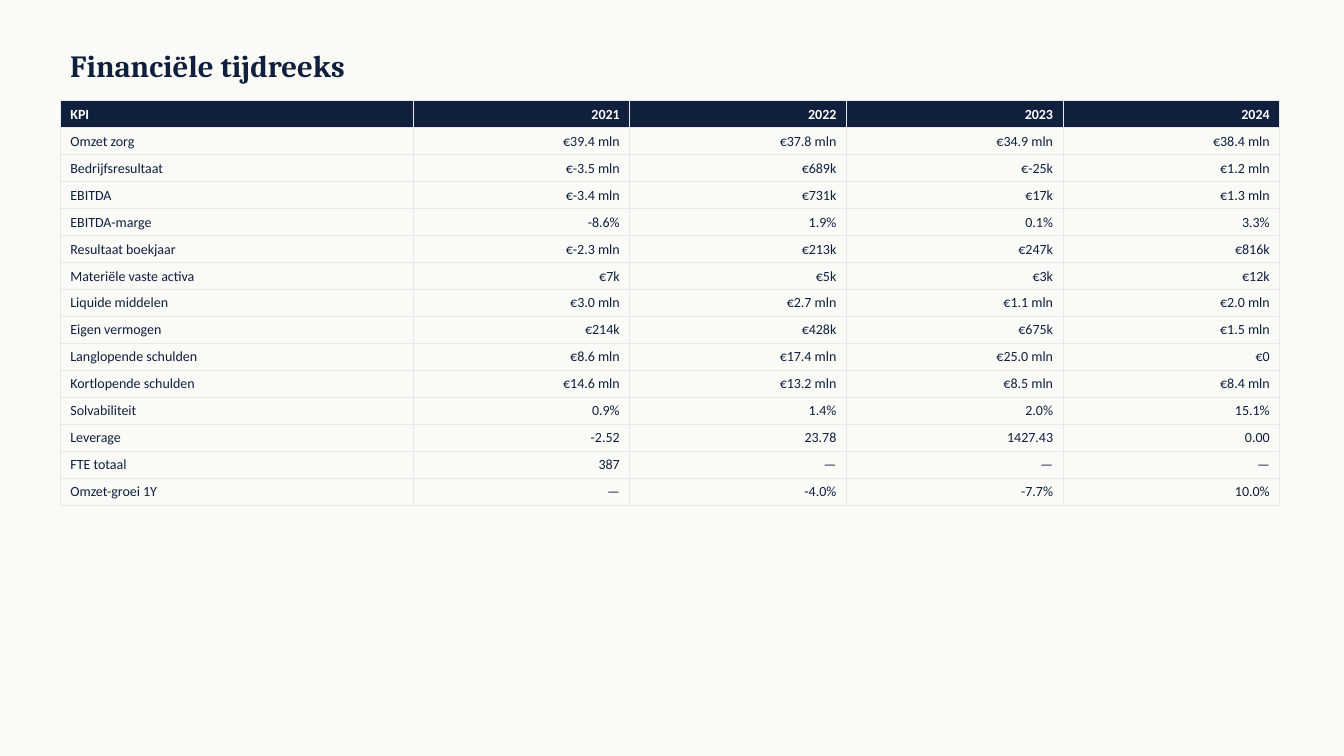
from lxml import etree
from pptx import Presentation
from pptx.dml.color import RGBColor
from pptx.enum.text import MSO_ANCHOR, PP_ALIGN
from pptx.oxml.ns import qn
from pptx.util import Cm, Pt

LEFT, RIGHT = PP_ALIGN.LEFT, PP_ALIGN.RIGHT
MIDDLE = MSO_ANCHOR.MIDDLE
NAVY, WHITE, PAPER, GRID = "0F1F3D", "FFFFFF", "FAFAF7", "E5E7EB"
ROW_HEIGHT = 0.68
COLUMN_WIDTHS = [8.89] + [5.46] * 4

KPI_ROWS = [
    ("KPI", "2021", "2022", "2023", "2024"),
    ("Omzet zorg", "€39.4 mln", "€37.8 mln", "€34.9 mln", "€38.4 mln"),
    ("Bedrijfsresultaat", "€-3.5 mln", "€689k", "€-25k", "€1.2 mln"),
    ("EBITDA", "€-3.4 mln", "€731k", "€17k", "€1.3 mln"),
    ("EBITDA-marge", "-8.6%", "1.9%", "0.1%", "3.3%"),
    ("Resultaat boekjaar", "€-2.3 mln", "€213k", "€247k", "€816k"),
    ("Materiële vaste activa", "€7k", "€5k", "€3k", "€12k"),
    ("Liquide middelen", "€3.0 mln", "€2.7 mln", "€1.1 mln", "€2.0 mln"),
    ("Eigen vermogen", "€214k", "€428k", "€675k", "€1.5 mln"),
    ("Langlopende schulden", "€8.6 mln", "€17.4 mln", "€25.0 mln", "€0"),
    ("Kortlopende schulden", "€14.6 mln", "€13.2 mln", "€8.5 mln", "€8.4 mln"),
    ("Solvabiliteit", "0.9%", "1.4%", "2.0%", "15.1%"),
    ("Leverage", "-2.52", "23.78", "1427.43", "0.00"),
    ("FTE totaal", "387", "—", "—", "—"),
    ("Omzet-groei 1Y", "—", "-4.0%", "-7.7%", "10.0%"),
]


def color(value):
    return RGBColor.from_string(value)


def add_span(para, text, font, size, ink, bold):
    span = para.add_run()
    span.text = text
    span.font.name = font
    span.font.size = Pt(size)
    span.font.bold = bold
    span.font.color.rgb = color(ink)


deck = Presentation()
deck.slide_width, deck.slide_height = Cm(33.87), Cm(19.05)
page = deck.slides.add_slide(deck.slide_layouts[6])
page.background.fill.solid()
page.background.fill.fore_color.rgb = color(PAPER)

title_box = page.shapes.add_textbox(Cm(1.52), Cm(1.02), Cm(30.48), Cm(1.27))
title_box.text_frame.word_wrap = True
title_box.text_frame.vertical_anchor = MIDDLE
add_span(title_box.text_frame.paragraphs[0], "Financiële tijdreeks", "Cambria", 22, NAVY, True)

table = page.shapes.add_table(
    len(KPI_ROWS), len(COLUMN_WIDTHS), Cm(1.52), Cm(2.54),
    Cm(sum(COLUMN_WIDTHS)), Cm(ROW_HEIGHT * len(KPI_ROWS)),
).table
table.horz_banding = False
for column, width in zip(table.columns, COLUMN_WIDTHS):
    column.width = Cm(width)

for row_index, values in enumerate(KPI_ROWS):
    table.rows[row_index].height = Cm(ROW_HEIGHT)
    is_header = row_index == 0
    for column_index, value in enumerate(values):
        cell = table.cell(row_index, column_index)
        properties = cell._tc.get_or_add_tcPr()
        for side in ("a:lnL", "a:lnR", "a:lnT", "a:lnB"):
            border = etree.SubElement(properties, qn(side), w=str(Pt(0.5)))
            border_fill = etree.SubElement(border, qn("a:solidFill"))
            etree.SubElement(border_fill, qn("a:srgbClr"), val=GRID)
        if is_header:
            cell.fill.solid()
            cell.fill.fore_color.rgb = color(NAVY)
        else:
            cell.fill.background()
        para = cell.text_frame.paragraphs[0]
        para.alignment = RIGHT if column_index else LEFT
        add_span(para, value, "Calibri", 10, WHITE if is_header else NAVY, is_header)

deck.save("out.pptx")
